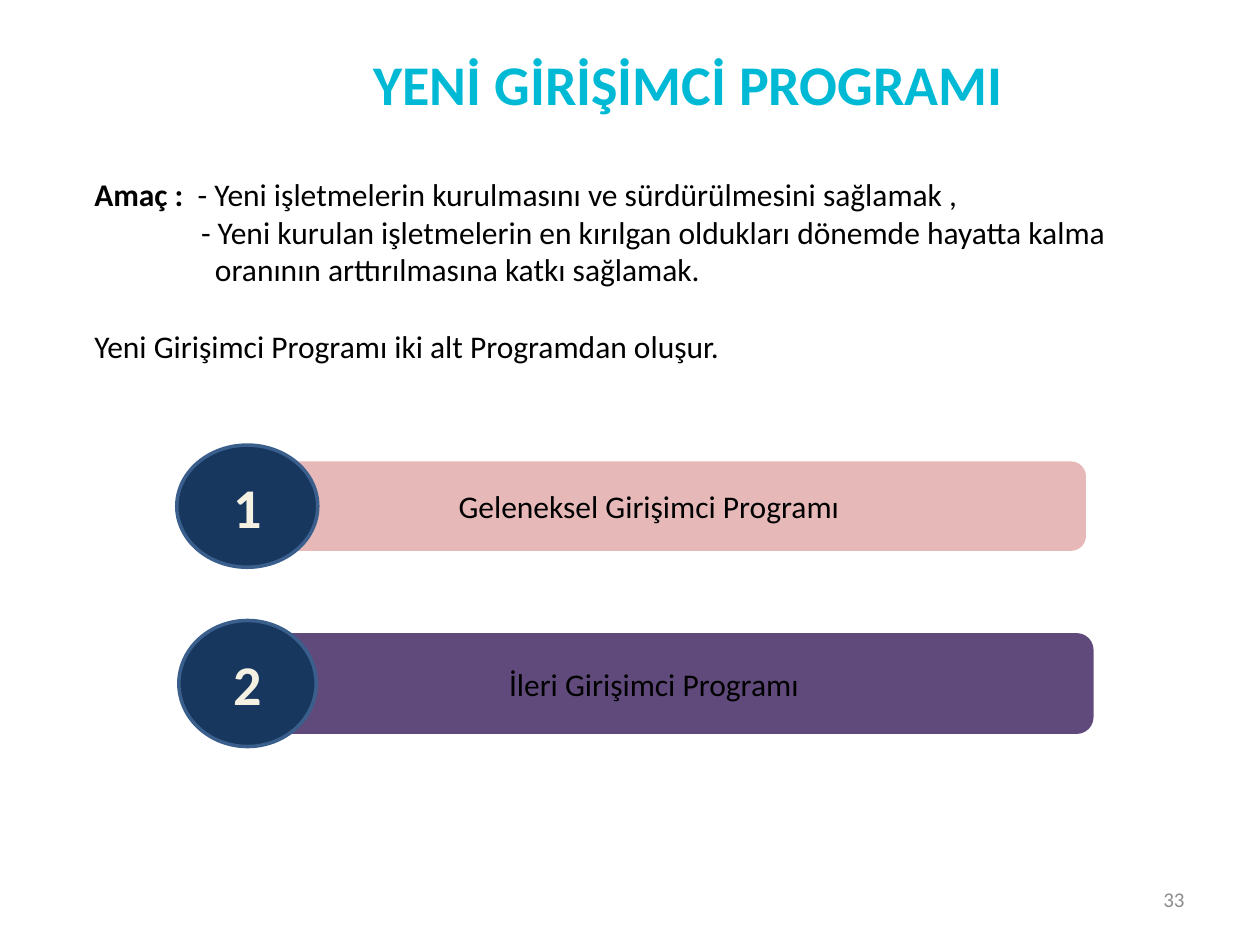
from dataclasses import dataclass

from pptx import Presentation
from pptx.dml.color import RGBColor
from pptx.enum.shapes import MSO_SHAPE
from pptx.enum.text import MSO_ANCHOR, PP_ALIGN
from pptx.util import Pt

ROUNDED, ELLIPSE = MSO_SHAPE.ROUNDED_RECTANGLE, MSO_SHAPE.OVAL
TOP, MIDDLE = MSO_ANCHOR.TOP, MSO_ANCHOR.MIDDLE
LEFT, CENTER, RIGHT = PP_ALIGN.LEFT, PP_ALIGN.CENTER, PP_ALIGN.RIGHT


@dataclass(frozen=True)
class Theme:
    font: str = "Calibri"
    accent: str = "00BAD5"
    ink: str = "000000"
    muted: str = "8C8C8C"
    pink: str = "E6B9B8"
    purple: str = "604A7B"
    navy: str = "17375E"
    navy_line: str = "3A5F8C"
    cream: str = "F4F1E3"
    large: int = 32
    body: int = 18
    small: int = 12


THEME = Theme()


def write(para, text, size=THEME.body, color=THEME.ink, bold=False, align=LEFT):
    para.alignment = align
    span = para.add_run()
    span.text = text
    span.font.name = THEME.font
    span.font.size = Pt(size)
    span.font.bold = bold
    span.font.color.rgb = RGBColor.from_string(color)


def set_hanging_indent(para, margin, hang):
    properties = para._p.get_or_add_pPr()
    properties.set("marL", str(Pt(margin)))
    properties.set("indent", str(Pt(-hang)))


def add_text_box(page, bounds, anchor=MIDDLE):
    box = page.shapes.add_textbox(*map(Pt, bounds))
    box.text_frame.word_wrap = True
    box.text_frame.vertical_anchor = anchor
    return box.text_frame


def add_label_shape(page, kind, bounds, text, fill, line=None, right_inset=7.2, **style):
    shape = page.shapes.add_shape(kind, *map(Pt, bounds))
    shape.shadow.inherit = False
    shape.fill.solid()
    shape.fill.fore_color.rgb = RGBColor.from_string(fill)
    if line:
        shape.line.color.rgb = RGBColor.from_string(line)
        shape.line.width = Pt(2)
    else:
        shape.line.fill.background()
    frame = shape.text_frame
    frame.word_wrap = True
    frame.vertical_anchor = MIDDLE
    frame.margin_right = Pt(right_inset)
    write(frame.paragraphs[0], text, align=CENTER, **style)


def add_title(page, bounds):
    write(add_text_box(page, bounds).paragraphs[0], "YENİ GİRİŞİMCİ PROGRAMI",
          size=THEME.large, color=THEME.accent, bold=True, align=CENTER)


def add_purpose(page, bounds):
    frame = add_text_box(page, bounds, TOP)
    first_goal = frame.paragraphs[0]
    write(first_goal, "Amaç :", bold=True)
    write(first_goal, "  - Yeni işletmelerin kurulmasını ve sürdürülmesini sağlamak ,")

    second_goal = frame.add_paragraph()
    set_hanging_indent(second_goal, 69, 8)
    write(second_goal, "- Yeni kurulan işletmelerin en kırılgan oldukları dönemde "
                       "hayatta kalma oranının arttırılmasına katkı sağlamak.")

    summary = frame.add_paragraph()
    summary.space_before = Pt(22)
    write(summary, "Yeni Girişimci Programı iki alt Programdan oluşur.")


def add_program(page, bar, badge, number, name, fill):
    """Draw a program bar with its numbered badge over the left end."""
    add_label_shape(page, ROUNDED, bar, name, fill, right_inset=19.2)
    add_label_shape(page, ELLIPSE, badge, str(number), THEME.navy, THEME.navy_line,
                    size=THEME.large, color=THEME.cream, bold=True)


def add_page_number(page, bounds):
    write(add_text_box(page, bounds).paragraphs[0], "33",
          size=THEME.small, color=THEME.muted, align=RIGHT)


def main():
    deck = Presentation()
    deck.slide_width, deck.slide_height = Pt(720), Pt(538)
    page = deck.slides.add_slide(deck.slide_layouts[6])
    add_title(page, (121.7, 13.7, 543.6, 67.7))
    add_purpose(page, (46.8, 96.2, 619.2, 159.8))
    programs = [
        ((133.2, 263.5, 487.4, 51.1), (101, 254.2, 80.6, 69.8),
         "Geleneksel Girişimci Programı", THEME.pink),
        ((134.6, 361.6, 490.3, 57.6), (102.2, 354.4, 78.5, 72),
         "İleri Girişimci Programı", THEME.purple),
    ]
    for number, (bar, badge, name, fill) in enumerate(programs, 1):
        add_program(page, bar, badge, number, name, fill)
    add_page_number(page, (516.2, 499, 167.8, 28.8))
    deck.save("out.pptx")


if __name__ == "__main__":
    main()
